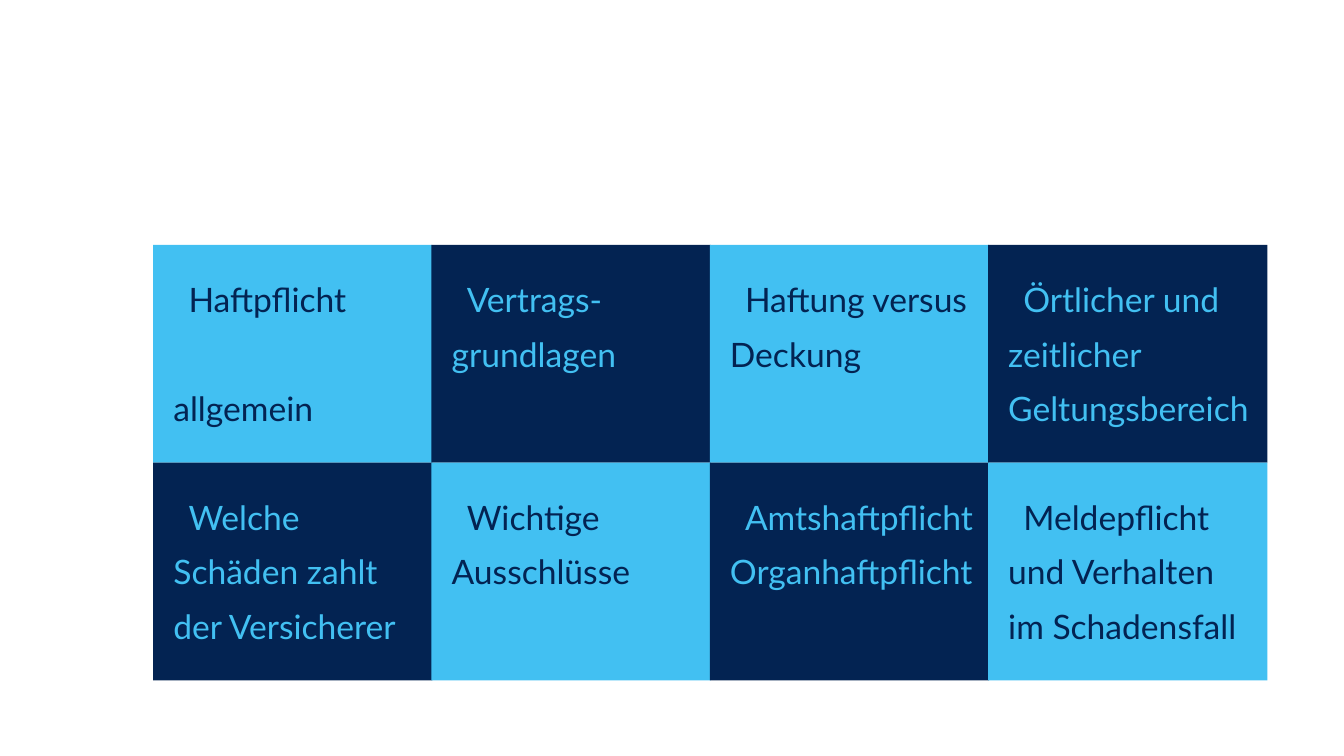
"""Build a checkerboard agenda slide on liability insurance."""
from dataclasses import dataclass

from pptx import Presentation
from pptx.dml.color import RGBColor
from pptx.enum.shapes import MSO_SHAPE
from pptx.enum.text import MSO_ANCHOR, PP_ALIGN
from pptx.util import Inches, Pt

RECT = MSO_SHAPE.RECTANGLE
TOP = MSO_ANCHOR.TOP
LEFT = PP_ALIGN.LEFT
SKY = RGBColor(0x42, 0xC0, 0xF2)
NAVY = RGBColor(0x03, 0x23, 0x52)

GRID_X, GRID_Y = 1.52, 2.43
COL, ROW = 2.76, 2.16
TILE_W = 2.77
INDENT = 0.15
GAP = 39


@dataclass(frozen=True)
class Topic:
    col: int
    row: int
    lines: tuple[str, ...]


TOPICS = [
    Topic(0, 0, ("Haftpflicht", "allgemein")),
    Topic(1, 0, ("Vertrags-grundlagen",)),
    Topic(2, 0, ("Haftung versus Deckung",)),
    Topic(3, 0, ("Örtlicher und zeitlicher Geltungsbereich",)),
    Topic(0, 1, ("Welche Schäden zahlt der Versicherer",)),
    Topic(1, 1, ("Wichtige Ausschlüsse",)),
    Topic(2, 1, ("Amtshaftpflicht Organhaftpflicht",)),
    Topic(3, 1, ("Meldepflicht und Verhalten im Schadensfall",)),
]


def draw_tile(slide, topic: Topic) -> None:
    light = (topic.col + topic.row) % 2 == 0
    fill, ink = (SKY, NAVY) if light else (NAVY, SKY)
    tile = slide.shapes.add_shape(
        RECT,
        Inches(GRID_X + topic.col * COL),
        Inches(GRID_Y + topic.row * ROW),
        Inches(TILE_W),
        Inches(ROW),
    )
    tile.shadow.inherit = False
    tile.fill.solid()
    tile.fill.fore_color.rgb = fill
    tile.line.fill.background()

    frame = tile.text_frame
    frame.word_wrap = True
    frame.vertical_anchor = TOP
    frame.margin_left = frame.margin_top = Inches(0.2)
    frame.margin_right = Inches(0.12)
    frame.margin_bottom = 0
    for index, line in enumerate(topic.lines):
        para = frame.add_paragraph() if index else frame.paragraphs[0]
        para.alignment = LEFT
        para.line_spacing = 1.35
        para.space_before = Pt(GAP if index else 0)
        if index == 0:
            props = para._p.get_or_add_pPr()
            props.set("marL", "0")
            props.set("indent", str(Inches(INDENT)))
        run = para.add_run()
        run.text = line
        run.font.name = "Lato"
        run.font.size = Pt(24)
        run.font.color.rgb = ink


def main() -> None:
    deck = Presentation()
    deck.slide_width = Inches(13.33)
    deck.slide_height = Inches(7.5)
    slide = deck.slides.add_slide(deck.slide_layouts[6])
    for topic in TOPICS:
        draw_tile(slide, topic)
    deck.save("out.pptx")


if __name__ == "__main__":
    main()
